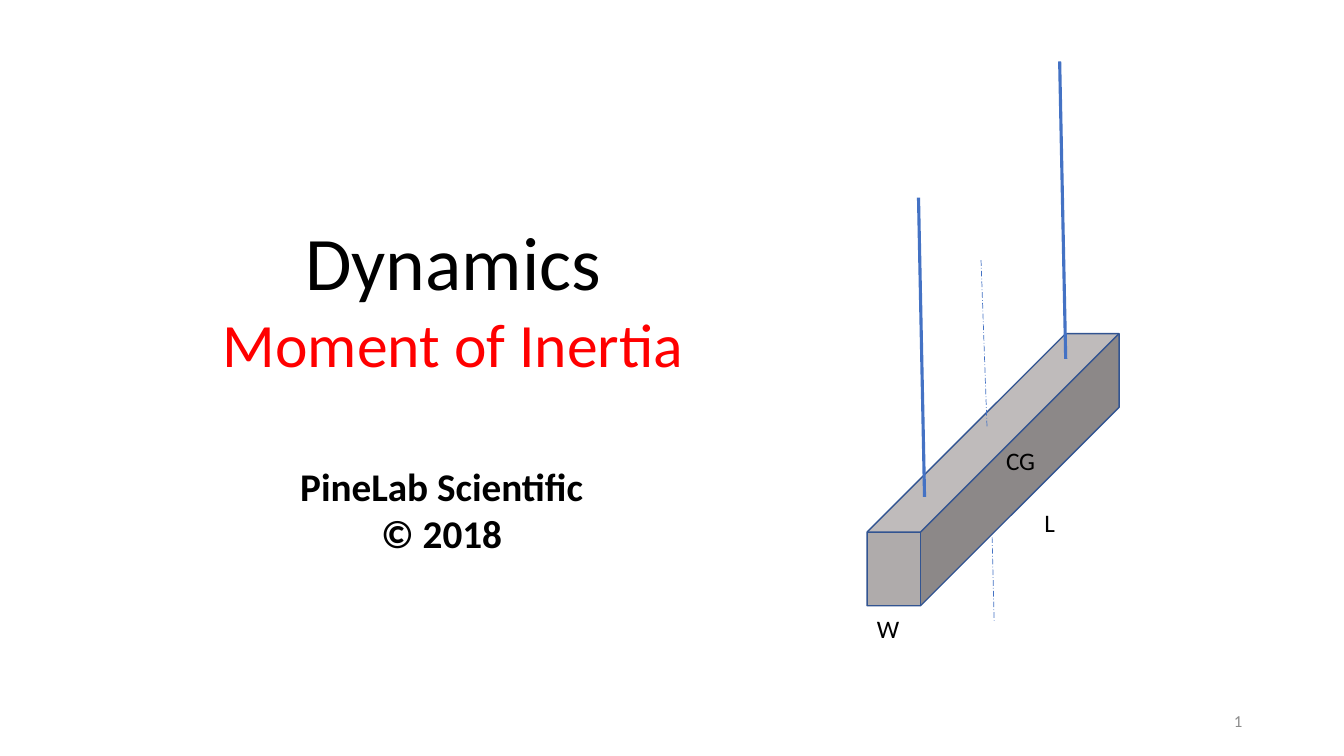
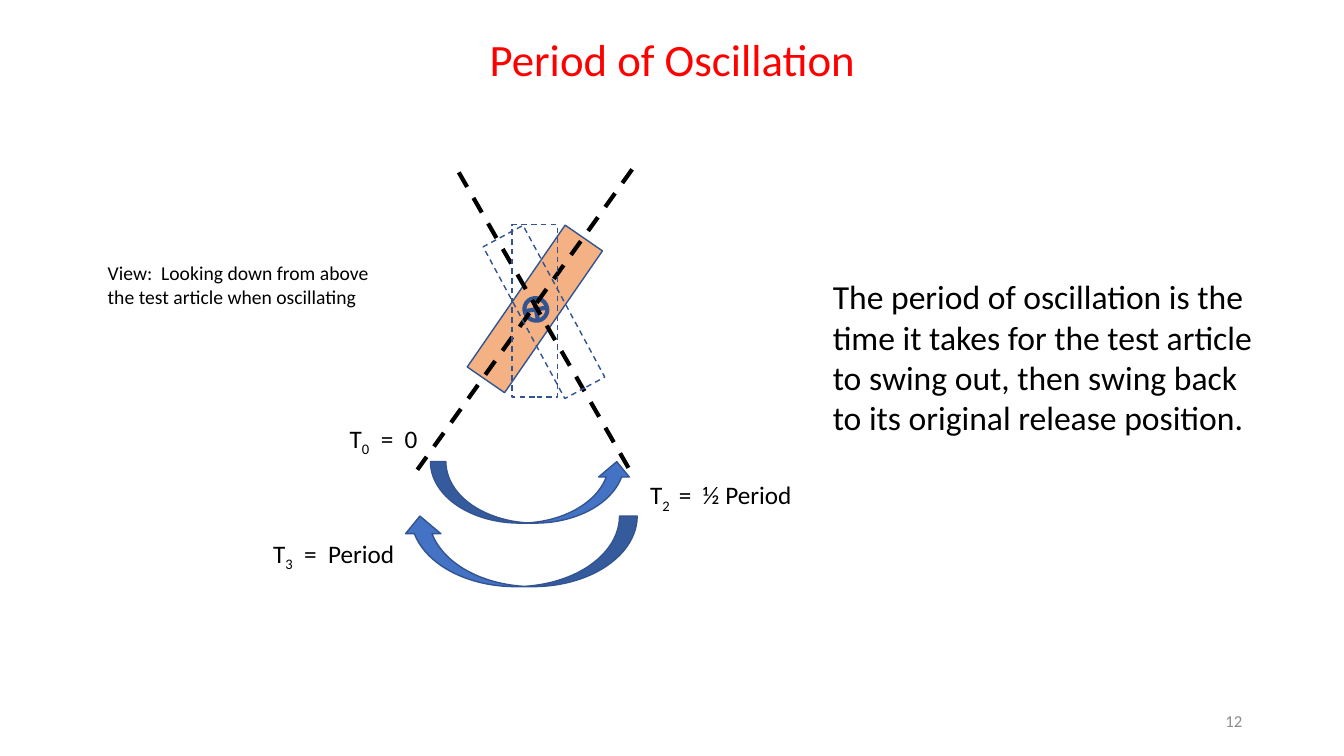
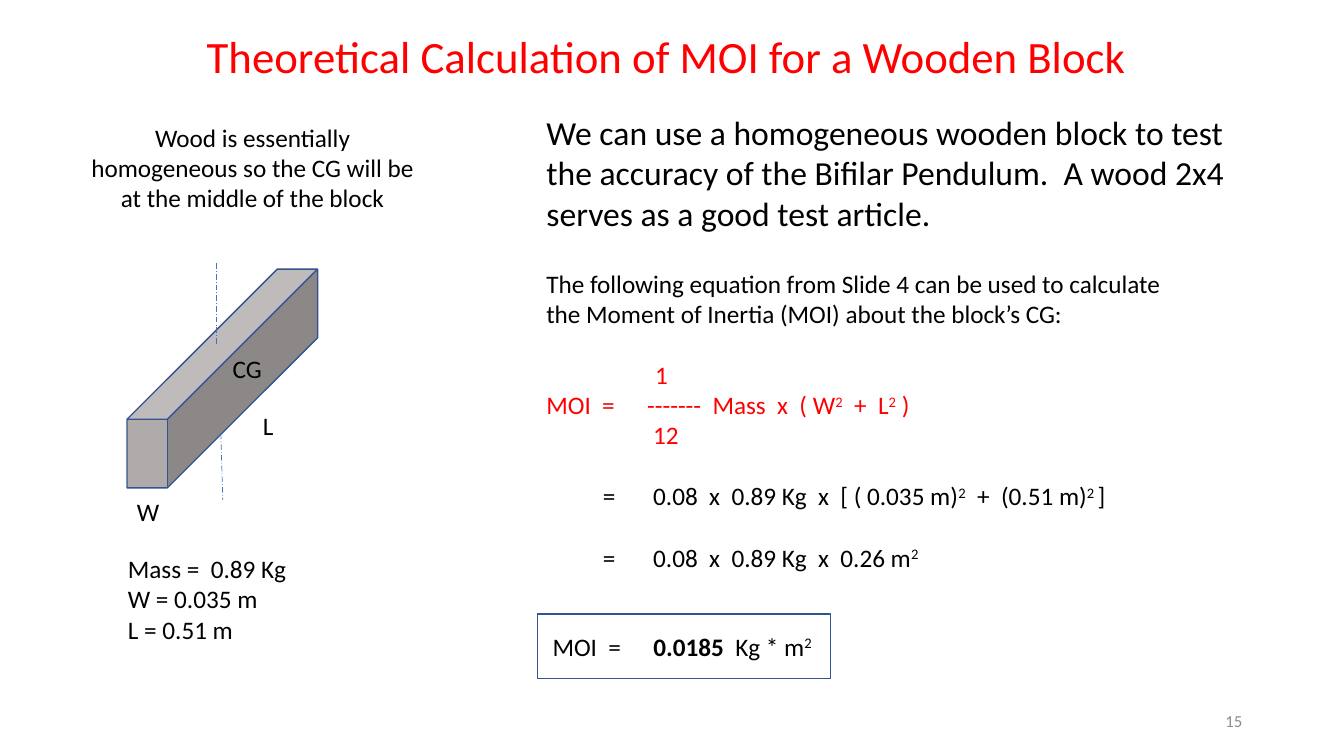
from dataclasses import dataclass
from lxml.etree import SubElement
from pptx import Presentation
from pptx.dml.color import RGBColor
from pptx.enum.dml import MSO_LINE
from pptx.enum.shapes import MSO_CONNECTOR, MSO_SHAPE
from pptx.enum.text import MSO_ANCHOR, MSO_AUTO_SIZE, PP_ALIGN
from pptx.oxml.ns import qn
from pptx.util import Inches, Pt

# Shared style
FONT = "Calibri"
BLACK = RGBColor(0x00, 0x00, 0x00)
RED = RGBColor(0xFF, 0x00, 0x00)
GREY = RGBColor(0x8C, 0x8C, 0x8C)
STONE = RGBColor(0xAF, 0xAB, 0xAB)
WOOD = RGBColor(0xF4, 0xB1, 0x83)
BLUE = RGBColor(0x44, 0x72, 0xC4)
OUTLINE = RGBColor(0x32, 0x54, 0x91)
NUMBER_BOX = (9.42, 6.95, 3, 0.4)
BASELINES = {"sub": "-25000", "sup": "30000"}
SQUARED = ("2", "sup")


@dataclass
class Para:
    runs: tuple  # plain strings or (text, "sub" | "sup" | "bold")
    size: float = 18
    color: RGBColor = BLACK
    bold: bool = False
    indent: float = 0
    tab: float = 0
    before: float = 0


# Slide 1: title and hanging block
COVER_TITLE = [Para(("Dynamics",), 54), Para(("Moment of Inertia",), 44, RED)]
COVER_CREDIT = [Para(("PineLab Scientific",), 28, bold=True),
                Para(("© 2018",), 28, bold=True)]
HANGING_BLOCK = {
    "cube": (8.6, 3.31, 2.5, 2.7),
    "labels": [("W", 8.6, 6.04), ("L", 10.26, 4.98), ("CG", 9.88, 4.37)],
    "axis": [(9.73, 2.58, 9.79, 4.25), (9.84, 5.33, 9.86, 6.16)],
}
STRINGS = [(9.11, 1.96, 9.17, 4.93), (10.51, 0.61, 10.57, 3.56)]

# Slide 2: oscillation
PERIOD_TEXT = ("The period of oscillation is the time it takes for the test article "
               "to swing out, then swing back to its original release position.")
VIEW_NOTE = "View:  Looking down from above the test article when oscillating"
TIMES = [
    (("T", ("3", "sub"), "  =  Period"), (2.61, 5.29, 1.53, 0.4)),
    (("T", ("2 ", "sub"), " =  ½ Period"), (6.35, 4.71, 3.1, 0.4)),
    (("T", ("0", "sub"), "  =  0"), (3.37, 4.15, 1.05, 0.4)),
]
SWING_LINES = [(6.27, 1.68, 4.14, 4.66), (4.55, 1.71, 6.29, 4.74)]
SWING_ARROWS = [((4.27, 4.58, 2, 0.61), False), ((3.99, 5.12, 2.33, 0.7), True)]
GHOST_BARS = [((5.08, 2.23, 0.45, 1.71), 0), ((5.17, 2.24, 0.45, 1.71), 331.7)]
RELEASE_ANGLE = 34.6

# Slide 3: calculation
BLOCK_INTRO = ("We can use a homogeneous wooden block to test the accuracy of the "
               "Bifilar Pendulum.  A wood 2x4 serves as a good test article.")
WOOD_NOTE = ("Wood is essentially homogeneous so the CG will be at the middle "
             "of the block")
DERIVATION = [
    Para(("The following equation from Slide 4 can be used to calculate the Moment "
          "of Inertia (MOI) about the block’s CG:",)),
    Para(("1",), color=RED, indent=1.08, before=22),
    Para(("MOI  =\t-------  Mass  x  ( W", SQUARED, "  +  L", SQUARED, " )"),
         color=RED, tab=0.91),
    Para(("12",), color=RED, indent=1.06),
    Para(("=\t0.08  x  0.89 Kg  x  [ ( 0.035 m)", SQUARED, "  +  (0.51 m)",
          ("2 ", "sup"), "]"), indent=0.56, tab=0.86, before=22),
    Para(("=\t0.08  x  0.89 Kg  x  0.26 m", SQUARED),
         indent=0.56, tab=0.86, before=22),
]
RESULT = Para(("MOI  =\t", ("0.0185", "bold"), "  Kg * m", SQUARED), tab=0.85)
MEASUREMENTS = ["Mass =  0.89 Kg", "W = 0.035 m", "L = 0.51 m"]
WOODEN_BLOCK = {
    "cube": (1.26, 2.67, 1.89, 2.17),
    "labels": [("W", 1.26, 4.87), ("L", 2.51, 4.02), ("CG", 2.21, 3.46)],
    "axis": [(2.15, 2.61, 2.15, 3.43), (2.19, 4.3, 2.21, 4.96)],
}


def inches(values):
    return [Inches(value) for value in values]


# Text
def write(frame, paras, align=PP_ALIGN.LEFT, anchor=MSO_ANCHOR.TOP):
    frame.word_wrap = True
    frame.auto_size = MSO_AUTO_SIZE.NONE
    frame.vertical_anchor = anchor
    for index, para in enumerate(paras):
        paragraph = frame.add_paragraph() if index else frame.paragraphs[0]
        properties = paragraph._p.get_or_add_pPr()
        properties.set("marL", str(Inches(para.indent)))
        properties.set("indent", "0")
        SubElement(properties, qn("a:buNone"))
        if para.tab:
            stops = SubElement(properties, qn("a:tabLst"))
            SubElement(stops, qn("a:tab"), pos=str(Inches(para.tab)), algn="l")
        paragraph.alignment = align
        paragraph.space_before = Pt(para.before)
        paragraph.font.name = FONT
        paragraph.font.size = Pt(para.size)
        paragraph.font.color.rgb = para.color
        paragraph.font.bold = para.bold
        for part in para.runs:
            text, style = (part, "") if isinstance(part, str) else part
            run = paragraph.add_run()
            run.text = text
            if style == "bold":
                run.font.bold = True
            elif style:
                run._r.get_or_add_rPr().set("baseline", BASELINES[style])


def add_text(slide, box, paras, **layout):
    write(slide.shapes.add_textbox(*inches(box)).text_frame, paras, **layout)


def fill_placeholder(placeholder, box, paras, **layout):
    placeholder.left, placeholder.top, placeholder.width, placeholder.height = inches(box)
    write(placeholder.text_frame, paras, **layout)


def add_title(slide, text, box):
    fill_placeholder(slide.shapes.title, box, [Para((text,), 32, RED)],
                     align=PP_ALIGN.CENTER, anchor=MSO_ANCHOR.MIDDLE)


def add_number(slide, number):
    add_text(slide, NUMBER_BOX, [Para((str(number),), 12, GREY)],
             align=PP_ALIGN.RIGHT, anchor=MSO_ANCHOR.MIDDLE)


# Drawing
def add_shape(shapes, preset, box, fill=None, width=1, dash=None, angle=0):
    shape = shapes.add_shape(preset, *inches(box))
    shape.shadow.inherit = False
    if fill is None:
        shape.fill.background()
    else:
        shape.fill.solid()
        shape.fill.fore_color.rgb = fill
    shape.line.color.rgb = OUTLINE
    shape.line.width = Pt(width)
    if dash:
        shape.line.dash_style = dash
    shape.rotation = angle
    return shape


def add_line(slide, ends, color, width, dash=None):
    line = slide.shapes.add_connector(MSO_CONNECTOR.STRAIGHT, *inches(ends))
    line.line.color.rgb = color
    line.line.width = Pt(width)
    if dash:
        line.line.dash_style = dash
    SubElement(line._element.spPr, qn("a:effectLst"))


def add_block(slide, block, strings=()):
    cube = add_shape(slide.shapes, MSO_SHAPE.CUBE, block["cube"], STONE)
    cube.adjustments[0] = 0.788
    for ends in strings:
        add_line(slide, ends, BLUE, 2.25)
    for ends in block["axis"]:
        add_line(slide, ends, BLUE, 0.5, MSO_LINE.LONG_DASH_DOT)
    for label, left, top in block["labels"]:
        add_text(slide, (left, top, 0.7, 0.4), [Para((label,))])


# Slides
def build_cover(slide):
    fill_placeholder(slide.shapes.title, (1.11, 2.08, 6.77, 1.75), COVER_TITLE,
                     align=PP_ALIGN.CENTER)
    fill_placeholder(slide.placeholders[1], (2.57, 4.54, 3.62, 1.04), COVER_CREDIT,
                     align=PP_ALIGN.CENTER)
    add_block(slide, HANGING_BLOCK, STRINGS)


def build_oscillation(slide):
    add_title(slide, "Period of Oscillation", (2.17, 0.28, 9, 0.61))
    fill_placeholder(slide.placeholders[1], (8.16, 2.69, 4.38, 1.72),
                     [Para((PERIOD_TEXT,), 24)])
    add_text(slide, (0.97, 2.54, 2.87, 0.57), [Para((VIEW_NOTE,), 14)])
    for runs, box in TIMES:
        add_text(slide, box, [Para(runs)])

    # Test article at its release position
    article = slide.shapes.add_group_shape()
    add_shape(article.shapes, MSO_SHAPE.RECTANGLE, (5.08, 2.21, 0.45, 1.71), WOOD,
              angle=RELEASE_ANGLE)
    add_shape(article.shapes, MSO_SHAPE.FLOWCHART_SUMMING_JUNCTION,
              (5.2, 2.96, 0.23, 0.22), width=3, angle=RELEASE_ANGLE)

    # Swing out, swing back and later positions
    for box, mirrored in SWING_ARROWS:
        arrow = add_shape(slide.shapes, MSO_SHAPE.CURVED_UP_ARROW, box, BLUE)
        if mirrored:
            arrow._element.spPr.xfrm.set("flipH", "1")
    for ends in SWING_LINES:
        add_line(slide, ends, BLACK, 3, MSO_LINE.DASH)
    for box, angle in GHOST_BARS:
        add_shape(slide.shapes, MSO_SHAPE.RECTANGLE, box, dash=MSO_LINE.DASH, angle=angle)


def build_calculation(slide):
    add_title(slide, "Theoretical Calculation of MOI for a Wooden Block",
              (1.72, 0.19, 9.78, 0.73))
    fill_placeholder(slide.placeholders[1], (5.32, 1.06, 7.39, 1.31),
                     [Para((BLOCK_INTRO,), 24)])
    add_text(slide, (5.32, 2.61, 6.51, 3.3), DERIVATION)
    result = add_shape(slide.shapes, MSO_SHAPE.RECTANGLE, (5.33, 6.09, 2.91, 0.64))
    result.text_frame.margin_left = Inches(0.15)
    write(result.text_frame, [RESULT], anchor=MSO_ANCHOR.MIDDLE)
    add_text(slide, (0.7, 1.16, 3.61, 1.01), [Para((WOOD_NOTE,))], align=PP_ALIGN.CENTER)
    add_block(slide, WOODEN_BLOCK)
    add_text(slide, (1.17, 5.44, 1.98, 1.01), [Para((line,)) for line in MEASUREMENTS])


def main():
    deck = Presentation()
    deck.slide_width, deck.slide_height = Inches(13.33), Inches(7.5)
    cover_layout, content_layout = deck.slide_layouts[0], deck.slide_layouts[1]
    for layout, build, number in [(cover_layout, build_cover, 1),
                                  (content_layout, build_oscillation, 12),
                                  (content_layout, build_calculation, 15)]:
        slide = deck.slides.add_slide(layout)
        build(slide)
        add_number(slide, number)
    deck.save("out.pptx")


if __name__ == "__main__":
    main()
